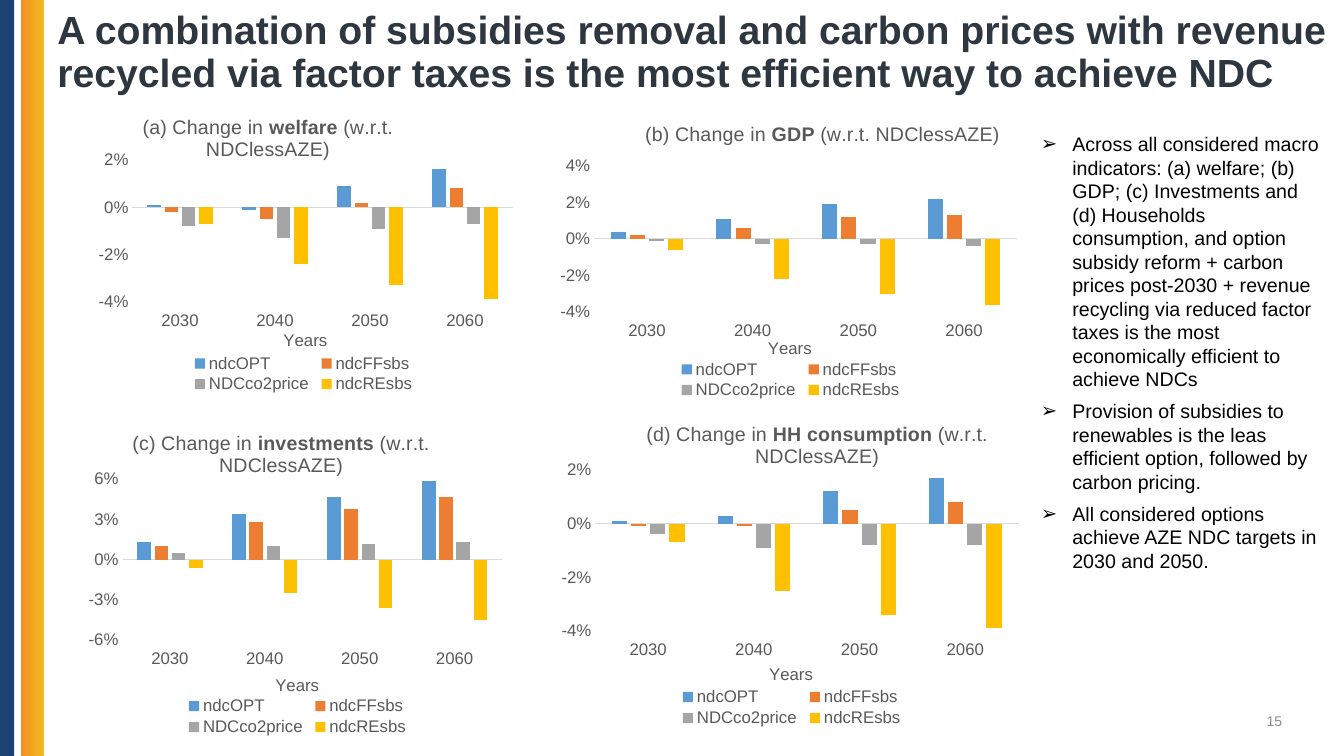
from pptx import Presentation
from pptx.chart.data import CategoryChartData
from pptx.dml.color import RGBColor
from pptx.enum.chart import XL_CHART_TYPE, XL_LEGEND_POSITION, XL_TICK_LABEL_POSITION, XL_TICK_MARK
from pptx.enum.shapes import MSO_SHAPE
from pptx.enum.text import MSO_ANCHOR, MSO_AUTO_SIZE, PP_ALIGN
from pptx.oxml.ns import qn
from pptx.util import Cm, Pt
from lxml.etree import SubElement

FONT = "Arial"
COLORS = {
    "navy": "1B4273", "orange": "F38F22", "amber": "F1BA20",
    "title": "2E3640", "body": "000000", "number": "8C8C8C",
    "chart text": "595959", "axis": "D9D9D9",
    "ndcOPT": "5B9BD5", "ndcFFsbs": "ED7D31",
    "NDCco2price": "A5A5A5", "ndcREsbs": "FFC000",
}
SCENARIOS = ["ndcOPT", "ndcFFsbs", "NDCco2price", "ndcREsbs"]
YEARS = ["2030", "2040", "2050", "2060"]
WIDE_PLOT = (0.101, 0.189, 0.872, 0.499)

# Box in cm, places of the chart's parts as shares of its size, values in percent
CHARTS = [
    {"label": "(a)", "topic": "welfare", "box": (1.98, 2.64, 11.23, 7.37),
     "title at": (0.137, 0.023), "years at": (0.453, 0.76), "legend": (0.245, 0.845, 0.52, 0.15),
     "plot": (0.121, 0.189, 0.853, 0.485), "scale": (-4, 2, 2),
     "values": [(0.1, -0.1, 0.9, 1.6), (-0.2, -0.5, 0.2, 0.8),
                (-0.8, -1.3, -0.9, -0.7), (-0.7, -2.4, -3.3, -3.9)]},
    {"label": "(b)", "topic": "GDP", "box": (13.74, 2.79, 12.22, 7.37),
     "title at": (0.2, 0.028), "years at": (0.453, 0.765), "legend": (0.266, 0.845, 0.48, 0.15),
     "plot": WIDE_PLOT, "scale": (-4, 4, 2),
     "values": [(0.4, 1.1, 1.9, 2.2), (0.2, 0.6, 1.2, 1.3),
                (-0.1, -0.3, -0.3, -0.4), (-0.6, -2.2, -3, -3.6)]},
    {"label": "(c)", "topic": "investments", "box": (1.98, 10.54, 10.97, 8.13),
     "title at": (0.117, 0.029), "years at": (0.445, 0.785), "legend": (0.238, 0.855, 0.53, 0.14),
     "plot": WIDE_PLOT, "scale": (-6, 6, 3),
     "values": [(1.3, 3.4, 4.7, 5.9), (1, 2.8, 3.8, 4.7),
                (0.5, 1, 1.2, 1.3), (-0.6, -2.5, -3.6, -4.5)]},
    {"label": "(d)", "topic": "HH consumption", "box": (13.77, 10.31, 12.22, 8.13),
     "title at": (0.2, 0.029), "years at": (0.453, 0.78), "legend": (0.266, 0.855, 0.48, 0.14),
     "plot": WIDE_PLOT, "scale": (-4, 2, 2),
     "values": [(0.1, 0.3, 1.2, 1.7), (-0.1, -0.1, 0.5, 0.8),
                (-0.4, -0.9, -0.8, -0.8), (-0.7, -2.5, -3.4, -3.9)]},
]

TITLE = ("A combination of subsidies removal and carbon prices with revenue "
         "recycled via factor taxes is the most efficient way to achieve NDC")
FINDINGS = [
    "Across all considered macro indicators: (a) welfare; (b) GDP; (c) Investments and "
    "(d) Households consumption, and option subsidy reform + carbon prices post-2030 + "
    "revenue recycling via reduced factor taxes is the most economically efficient to achieve NDCs",
    "Provision of subsidies to renewables is the leas efficient option, followed by carbon pricing.",
    "All considered options achieve AZE NDC targets in 2030 and 2050.",
]


def color(name):
    return RGBColor.from_string(COLORS[name])


def set_font(font, size, color_name, bold=False):
    font.name, font.size, font.bold = FONT, Pt(size), bold
    font.color.rgb = color(color_name)


def add_span(para, text, size, color_name, bold=False):
    span = para.add_run()
    span.text = text
    set_font(span.font, size, color_name, bold)


def move(shape, left, top, width, height):
    shape.left, shape.top = Cm(left), Cm(top)
    shape.width, shape.height = Cm(width), Cm(height)


def add_stripe(page, left, width, start, end=None):
    stripe = page.shapes.add_shape(MSO_SHAPE.RECTANGLE, Cm(left), 0, Cm(width), Cm(19.05))
    stripe.shadow.inherit = False
    stripe.line.fill.background()
    if end is None:
        stripe.fill.solid()
        stripe.fill.fore_color.rgb = color(start)
    else:
        stripe.fill.gradient()
        stripe.fill.gradient_angle = 0
        for stop, name in zip(stripe.fill.gradient_stops, (start, end)):
            stop.color.rgb = color(name)


def fill_title(box):
    move(box, 1.19, 0.05, 32.69, 2.59)
    frame = box.text_frame
    frame.auto_size = MSO_AUTO_SIZE.NONE
    frame.vertical_anchor = MSO_ANCHOR.MIDDLE
    para = frame.paragraphs[0]
    para.alignment, para.line_spacing = PP_ALIGN.LEFT, 0.9
    add_span(para, TITLE, 28, "title", bold=True)


def fill_findings(box):
    move(box, 25.98, 3.2, 7.62, 11.46)
    frame = box.text_frame
    frame.auto_size = MSO_AUTO_SIZE.NONE
    for index, finding in enumerate(FINDINGS):
        para = frame.add_paragraph() if index else frame.paragraphs[0]
        para.space_before, para.space_after = Pt(0), Pt(6)
        add_span(para, finding, 14, "body")
        properties = para._p.get_or_add_pPr()
        properties.set("marL", str(Cm(0.79)))
        properties.set("indent", str(-Cm(0.79)))
        SubElement(properties, qn("a:buChar"), char="➢")


def add_page_number(page, number):
    box = page.shapes.add_textbox(Cm(24.94), Cm(17.65), Cm(7.62), Cm(1.02))
    box.text_frame.word_wrap = True
    box.text_frame.vertical_anchor = MSO_ANCHOR.MIDDLE
    para = box.text_frame.paragraphs[0]
    para.alignment = PP_ALIGN.RIGHT
    add_span(para, number, 10, "number")


def place(element, index, shares, inner=False):
    """Give a chart part a fixed place, in shares of the chart's size."""
    for old in element.findall(qn("c:layout")):
        element.remove(old)
    layout = SubElement(element, qn("c:layout"))
    element.insert(index, layout)
    manual = SubElement(layout, qn("c:manualLayout"))
    if inner:
        SubElement(manual, qn("c:layoutTarget"), val="inner")
    for side in "xy":
        SubElement(manual, qn(f"c:{side}Mode"), val="edge")
    for side, share in zip("xywh", shares):
        SubElement(manual, qn(f"c:{side}"), val=str(share))


def format_axes(chart, scale, years_at):
    years, change = chart.category_axis, chart.value_axis
    for axis in (years, change):
        axis.major_tick_mark = axis.minor_tick_mark = XL_TICK_MARK.NONE
        axis.has_major_gridlines = False
        set_font(axis.tick_labels.font, 12, "chart text")
    years.tick_label_position = XL_TICK_LABEL_POSITION.LOW
    years.format.line.color.rgb = color("axis")
    years.format.line.width = Pt(0.75)
    add_span(years.axis_title.text_frame.paragraphs[0], "Years", 12, "chart text")
    place(years.axis_title._element, 1, years_at)
    change.format.line.fill.background()
    change.minimum_scale, change.maximum_scale, change.major_unit = (
        percent / 100 for percent in scale)
    change.tick_labels.number_format = "0%"
    change.tick_labels.number_format_is_linked = False


def add_change_chart(page, content):
    data = CategoryChartData(number_format="0%")
    data.categories = YEARS
    for scenario, values in zip(SCENARIOS, content["values"]):
        data.add_series(scenario, [round(value / 100, 3) for value in values])
    box = [Cm(length) for length in content["box"]]
    chart = page.shapes.add_chart(XL_CHART_TYPE.COLUMN_CLUSTERED, *box, data).chart
    set_font(chart.font, 12, "chart text")

    para = chart.chart_title.text_frame.paragraphs[0]
    add_span(para, f"{content['label']} Change in ", 14, "chart text")
    add_span(para, content["topic"], 14, "chart text", bold=True)
    add_span(para, " (w.r.t. NDClessAZE)", 14, "chart text")
    place(chart.chart_title._element, 1, content["title at"])

    plot = chart.plots[0]
    plot.gap_width, plot.overlap, plot.vary_by_categories = 219, -27, False
    for series in plot.series:
        series.invert_if_negative = False
        series.format.fill.solid()
        series.format.fill.fore_color.rgb = color(series.name)
    format_axes(chart, content["scale"], content["years at"])
    place(chart._chartSpace.chart.plotArea, 0, content["plot"], inner=True)

    chart.has_legend = True
    chart.legend.position = XL_LEGEND_POSITION.BOTTOM
    chart.legend.include_in_layout = False
    set_font(chart.legend.font, 12, "chart text")
    place(chart.legend._element, 1, content["legend"])


def main():
    deck = Presentation()
    deck.slide_width, deck.slide_height = Cm(33.87), Cm(19.05)
    page = deck.slides.add_slide(deck.slide_layouts[1])
    add_stripe(page, 0, 0.36, "navy")
    add_stripe(page, 0.53, 0.58, "orange", "amber")
    fill_title(page.shapes.title)
    for content in CHARTS:
        add_change_chart(page, content)
    fill_findings(page.placeholders[1])
    add_page_number(page, "15")
    deck.save("out.pptx")


if __name__ == "__main__":
    main()
